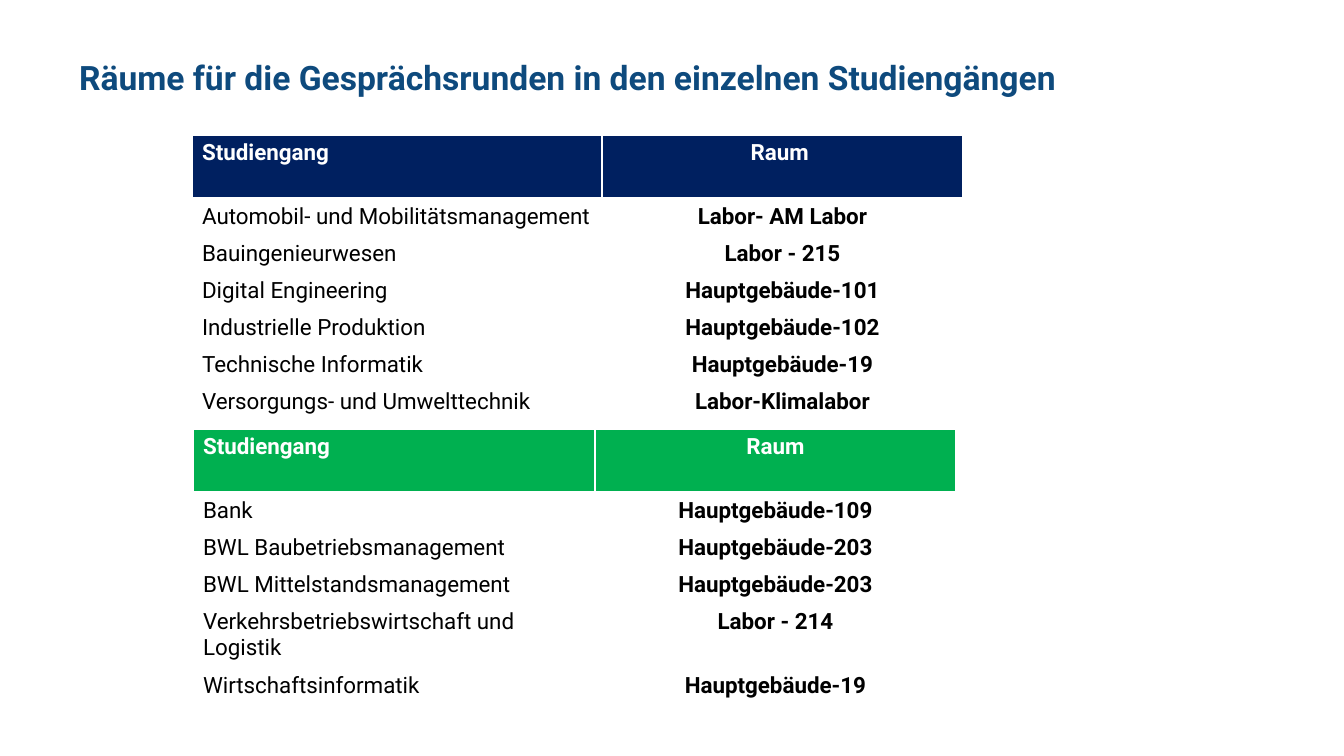
from pptx import Presentation
from pptx.dml.color import RGBColor as Rgb
from pptx.enum.text import MSO_ANCHOR as Anchor, MSO_AUTO_SIZE as Fit, PP_ALIGN as Align
from pptx.oxml import parse_xml
from pptx.oxml.ns import nsdecls
from pptx.util import Pt

SCALE = 914400 / 100.8
FONT = "Roboto"
COLORS = {"title": "0E4A7D", "navy": "002060", "green": "00B050",
          "white": "FFFFFF", "black": "000000"}
HEAD, LINE, WRAP = 64, 37, 64

TECH = [
    ("Studiengang", "Raum "),
    ("Automobil- und Mobilitätsmanagement", "Labor- AM Labor"),
    ("Bauingenieurwesen", "Labor - 215"),
    ("Digital Engineering", "Hauptgebäude-101"),
    ("Industrielle Produktion", "Hauptgebäude-102"),
    ("Technische Informatik", "Hauptgebäude-19"),
    ("Versorgungs- und Umwelttechnik", "Labor-Klimalabor"),
]
TRADE = [
    ("Studiengang", "Raum"),
    ("Bank", "Hauptgebäude-109"),
    ("BWL Baubetriebsmanagement", "Hauptgebäude-203"),
    ("BWL Mittelstandsmanagement", "Hauptgebäude-203"),
    ("Verkehrsbetriebswirtschaft und Logistik", "Labor - 214"),
    ("Wirtschaftsinformatik", "Hauptgebäude-19"),
]


def px(num):
    return round(num * SCALE)


def write(frame, text, size, color, bold, align):
    frame.text = text
    para = frame.paragraphs[0]
    para.alignment = align
    font = para.runs[0].font
    for key, value in {"name": FONT, "size": Pt(size), "bold": bold}.items():
        setattr(font, key, value)
    font.color.rgb = Rgb.from_string(COLORS[color])


def add_title(slide, text):
    title = slide.shapes.title
    place = {"left": 69, "top": 52, "width": 1133, "height": 50}
    for key, value in place.items():
        setattr(title, key, px(value))
    frame = title.text_frame
    form = {"word_wrap": True, "auto_size": Fit.NONE, "vertical_anchor": Anchor.TOP}
    for key, value in form.items():
        setattr(frame, key, value)
    write(frame, text, 24, "title", True, Align.LEFT)


def edge(cell, base):
    """Draw white cell borders, with the bottom one base points wide."""
    props = cell._tc.get_or_add_tcPr()
    for side, width in {"L": 1, "R": 1, "T": 1, "B": base}.items():
        props.append(parse_xml(
            f'<a:ln{side} {nsdecls("a")} w="{Pt(width)}"><a:solidFill>'
            f'<a:srgbClr val="{COLORS["white"]}"/></a:solidFill></a:ln{side}>'))


def add_rooms(slide, left, top, widths, rows, color, tall=()):
    """Add a table of rooms; rows listed in tall hold two lines."""
    highs = [HEAD] + [WRAP if i in tall else LINE for i in range(1, len(rows))]
    frame = slide.shapes.add_table(len(rows), len(widths), px(left), px(top),
                                   px(sum(widths)), px(sum(highs)))
    table = frame.table
    table.horz_banding = False
    for col, width in zip(table.columns, widths):
        col.width = px(width)
    for i, (row, high) in enumerate(zip(rows, highs)):
        table.rows[i].height = px(high)
        for j, text in enumerate(row):
            cell = table.cell(i, j)
            head = i == 0
            write(cell.text_frame, text, 16, "white" if head else "black",
                  head or j == 1, Align.CENTER if j else Align.LEFT)
            edge(cell, 3 if head else 1)
            if head:
                cell.fill.solid()
                cell.fill.fore_color.rgb = Rgb.from_string(COLORS[color])
            else:
                cell.fill.background()


def main():
    deck = Presentation()
    deck.slide_width, deck.slide_height = px(1344), px(756)
    slide = deck.slides.add_slide(deck.slide_layouts[5])
    add_title(slide, "Räume für die Gesprächsrunden in den einzelnen Studiengängen")
    add_rooms(slide, 192, 135, (410, 361), TECH, "navy")
    add_rooms(slide, 193, 429, (402, 361), TRADE, "green", tall=(4,))
    deck.save("out.pptx")


if __name__ == "__main__":
    main()
